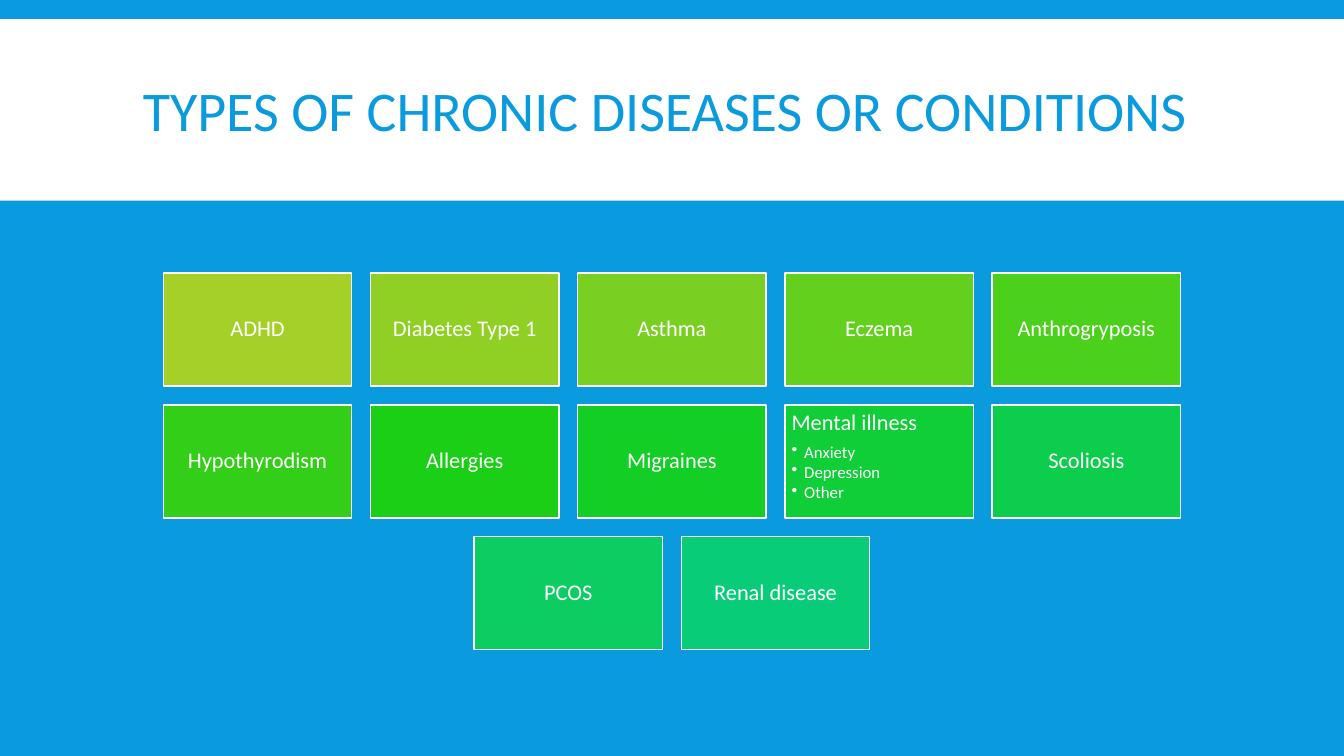
import pptx
import pptx.util
import pptx.dml.color
import pptx.enum.shapes
import pptx.enum.text
import lxml.etree

Pt = pptx.util.Pt
RGB = pptx.dml.color.RGBColor.from_string
ALIGN = pptx.enum.text.PP_ALIGN
ANCHOR = pptx.enum.text.MSO_ANCHOR
RECT = pptx.enum.shapes.MSO_SHAPE.RECTANGLE

COLORS = {"blue": "099BDD", "white": "FFFFFF"}
ROWS = [
    [("ADHD", "A5D028"), ("Diabetes Type 1", "90D025"), ("Asthma", "7AD022"),
     ("Eczema", "63D01E"), ("Anthrogryposis", "4BD01B")],
    [("Hypothyrodism", "33CF18"), ("Allergies", "1ACF15"), ("Migraines", "13CE24"),
     ("Mental illness", "10CE38"), ("Scoliosis", "0DCD4D")],
    [("PCOS", "0BCD62"), ("Renal disease", "08CC78")],
]
KINDS = {"Mental illness": ["Anxiety", "Depression", "Other"]}


def add_rect(left, top, width, height, color):
    shape = slide.shapes.add_shape(RECT, Pt(left), Pt(top), Pt(width), Pt(height))
    shape.shadow.inherit = False
    shape.fill.solid()
    shape.fill.fore_color.rgb = RGB(color)
    shape.line.fill.background()
    return shape


def style(para, text, size, color, line, after=0):
    para.text = text
    para.font.name = "Calibri"
    para.font.size = Pt(size)
    para.font.color.rgb = RGB(color)
    para.line_spacing = line
    para.space_after = Pt(after)


# Slide and background
deck = pptx.Presentation()
deck.slide_width, deck.slide_height = Pt(960), Pt(540)
slide = deck.slides.add_slide(deck.slide_layouts[6])
slide.background.fill.solid()
slide.background.fill.fore_color.rgb = RGB(COLORS["blue"])

# Title band
add_rect(0, 13.7, 960, 129.6, COLORS["white"])
title = slide.shapes.add_textbox(Pt(95), Pt(22.3), Pt(770.4), Pt(118.8))
frame = title.text_frame
frame.word_wrap = True
frame.vertical_anchor = ANCHOR.MIDDLE
style(frame.paragraphs[0], "TYPES OF CHRONIC DISEASES OR CONDITIONS", 40, COLORS["blue"], 0.85)

# Tiles, each row centred on the slide
WIDE, HIGH, GAP = 134.6, 80.8, 13.4
for row, tiles in enumerate(ROWS):
    span = len(tiles) * (WIDE + GAP) - GAP
    for col, (name, color) in enumerate(tiles):
        left = (960 - span) / 2 + col * (WIDE + GAP)
        tile = add_rect(left, 195 + row * (HIGH + GAP), WIDE, HIGH, color)
        tile.line.color.rgb = RGB(COLORS["white"])
        tile.line.width = Pt(1)
        frame = tile.text_frame
        frame.word_wrap = True
        frame.margin_left = frame.margin_right = Pt(4.8)
        frame.margin_top = frame.margin_bottom = Pt(4.8)
        kinds = KINDS.get(name, [])
        frame.vertical_anchor = ANCHOR.TOP if kinds else ANCHOR.MIDDLE
        head = frame.paragraphs[0]
        head.alignment = ALIGN.LEFT if kinds else ALIGN.CENTER
        style(head, name, 16, COLORS["white"], 0.9, 5.6)

        # Bulleted kinds under the heading
        for kind in kinds:
            para = frame.add_paragraph()
            para.level = 1
            para.alignment = ALIGN.LEFT
            style(para, kind, 12, COLORS["white"], 0.9, 1.6)
            props = para._p.get_or_add_pPr()
            props.set("marL", str(Pt(9)))
            props.set("indent", str(Pt(-9)))
            mark = lxml.etree.Element(pptx.oxml.ns.qn("a:buChar"), char="•")
            props.find(pptx.oxml.ns.qn("a:defRPr")).addprevious(mark)

deck.save("out.pptx")
